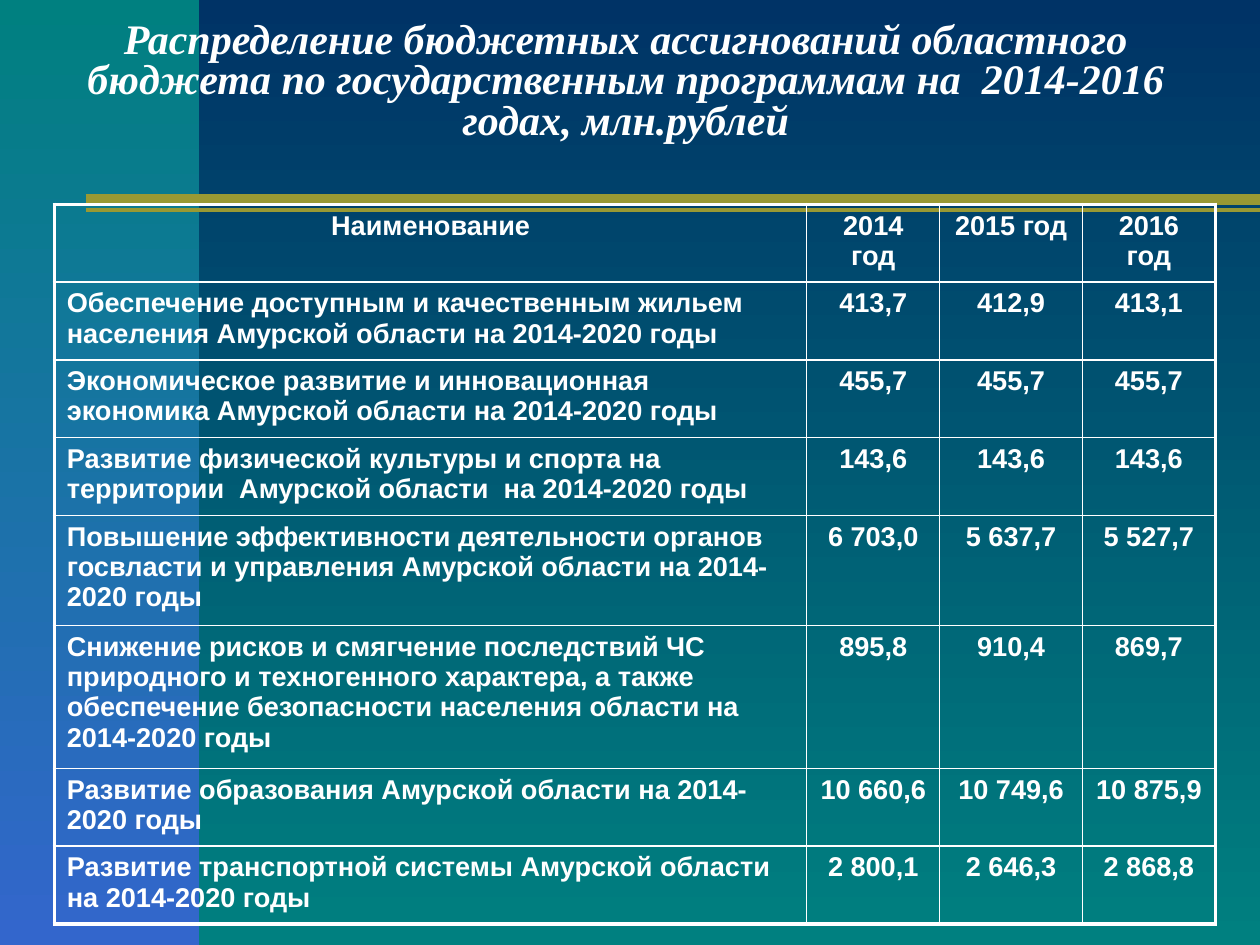
import dataclasses

import lxml.etree
import pptx
import pptx.dml.color
import pptx.enum.shapes
import pptx.enum.text
import pptx.oxml.ns
import pptx.util

Pt = pptx.util.Pt
qn = pptx.oxml.ns.qn
ALIGN = pptx.enum.text.PP_ALIGN


@dataclasses.dataclass(frozen=True)
class Theme:
    background: tuple = ("003366", "008080")
    band: tuple = ("008080", "3366CC")
    rule: str = "999933"
    text: str = "FFFFFF"
    shadow: str = "000000"
    title_font: str = "Times New Roman"
    body_font: str = "Arial"
    title_size: float = 24
    body_size: float = 15.5
    inner_border: float = 1
    outer_border: float = 2.25


THEME = Theme()
TITLE = ("Распределение бюджетных ассигнований областного бюджета "
         "по государственным программам на  2014-2016 годах, млн.рублей")
COLUMNS = [430, 76, 81.5, 76]
ROWS = [43, 43, 43, 43, 61, 79, 43, 43]
DATA = [
    ("Наименование", "2014 год", "2015 год", "2016 год"),
    ("Обеспечение доступным и качественным жильем населения Амурской области "
     "на 2014-2020 годы", "413,7", "412,9", "413,1"),
    ("Экономическое развитие и инновационная экономика Амурской области "
     "на 2014-2020 годы", "455,7", "455,7", "455,7"),
    ("Развитие физической культуры и спорта на территории  Амурской области  "
     "на 2014-2020 годы", "143,6", "143,6", "143,6"),
    ("Повышение эффективности деятельности органов госвласти и управления "
     "Амурской области на 2014-2020 годы", "6 703,0", "5 637,7", "5 527,7"),
    ("Снижение рисков и смягчение последствий ЧС природного и техногенного "
     "характера, а также обеспечение безопасности населения области "
     "на 2014-2020 годы", "895,8", "910,4", "869,7"),
    ("Развитие образования Амурской области на 2014-2020 годы",
     "10 660,6", "10 749,6", "10 875,9"),
    ("Развитие транспортной системы Амурской области на 2014-2020 годы",
     "2 800,1", "2 646,3", "2 868,8"),
]


def rgb(value):
    return pptx.dml.color.RGBColor.from_string(value)


def apply(obj, formats):
    for name, value in formats.items():
        setattr(obj, name, value)


def sub(parent, tag, **attrs):
    return lxml.etree.SubElement(parent, qn(tag), attrs)


def set_gradient(fill, colors):
    fill.gradient()
    fill.gradient_angle = 270
    for stop, color in zip(fill.gradient_stops, colors):
        stop.color.rgb = rgb(color)


def add_band(s):
    sp = s.shapes.add_shape(pptx.enum.shapes.MSO_SHAPE.RECTANGLE,
                            0, 0, Pt(114), Pt(540))
    sp.shadow.inherit = False
    sp.line.fill.background()
    set_gradient(sp.fill, THEME.band)


def add_rule(s, y, width):
    sp = s.shapes.add_connector(pptx.enum.shapes.MSO_CONNECTOR.STRAIGHT,
                                Pt(49), Pt(y), Pt(720), Pt(y))
    sp.line.color.rgb = rgb(THEME.rule)
    sp.line.width = Pt(width)
    sub(sp._element.spPr, "a:effectLst")


def write(p, text, formats):
    r = p.add_run()
    r.text = text
    apply(r.font, formats)
    r.font.color.rgb = rgb(THEME.text)
    return r


def add_text_shadow(r):
    effects = lxml.etree.Element(qn("a:effectLst"))
    shadow = sub(effects, "a:outerShdw", blurRad="38100", dist="38100",
                 dir="2700000", algn="tl")
    sub(shadow, "a:srgbClr", val=THEME.shadow)
    r.font._element.find(qn("a:solidFill")).addnext(effects)


def add_title(s):
    tf = s.shapes.add_textbox(Pt(14.5), Pt(-30), Pt(686), Pt(136)).text_frame
    apply(tf, {"word_wrap": True, "margin_top": Pt(22),
               "vertical_anchor": pptx.enum.text.MSO_ANCHOR.MIDDLE})
    p = tf.paragraphs[0]
    apply(p, {"alignment": ALIGN.CENTER, "line_spacing": 0.8})
    r = write(p, TITLE, {"name": THEME.title_font, "size": Pt(THEME.title_size),
                         "bold": True, "italic": True})
    add_text_shadow(r)


def set_borders(cell, outer_sides):
    tcPr = cell._tc.get_or_add_tcPr()
    for side, outer in outer_sides.items():
        width = THEME.outer_border if outer else THEME.inner_border
        ln = sub(tcPr, "a:ln" + side, w=str(int(Pt(width))))
        sub(sub(ln, "a:solidFill"), "a:srgbClr", val=THEME.text)


def add_budget_table(s):
    tbl = s.shapes.add_table(len(ROWS), len(COLUMNS), Pt(31), Pt(116.75),
                             Pt(sum(COLUMNS)), Pt(sum(ROWS))).table
    apply(tbl, {"first_row": False, "horz_banding": False})
    for column, width in zip(tbl.columns, COLUMNS):
        column.width = Pt(width)
    for row, height in zip(tbl.rows, ROWS):
        row.height = Pt(height)
    for i, values in enumerate(DATA):
        for j, value in enumerate(values):
            cell = tbl.cell(i, j)
            set_borders(cell, {"L": j == 0, "R": j == len(COLUMNS) - 1,
                               "T": i == 0, "B": i == len(ROWS) - 1})
            cell.fill.background()
            p = cell.text_frame.paragraphs[0]
            p.alignment = ALIGN.LEFT if i and not j else ALIGN.CENTER
            write(p, value, {"name": THEME.body_font, "bold": True,
                             "size": Pt(THEME.body_size)})


def main():
    prs = pptx.Presentation()
    apply(prs, {"slide_width": Pt(720), "slide_height": Pt(540)})
    s = prs.slides.add_slide(prs.slide_layouts[6])
    set_gradient(s.background.fill, THEME.background)
    add_band(s)
    add_rule(s, 120, 2)
    add_rule(s, 114, 6)
    add_title(s)
    add_budget_table(s)
    prs.save("out.pptx")


if __name__ == "__main__":
    main()
